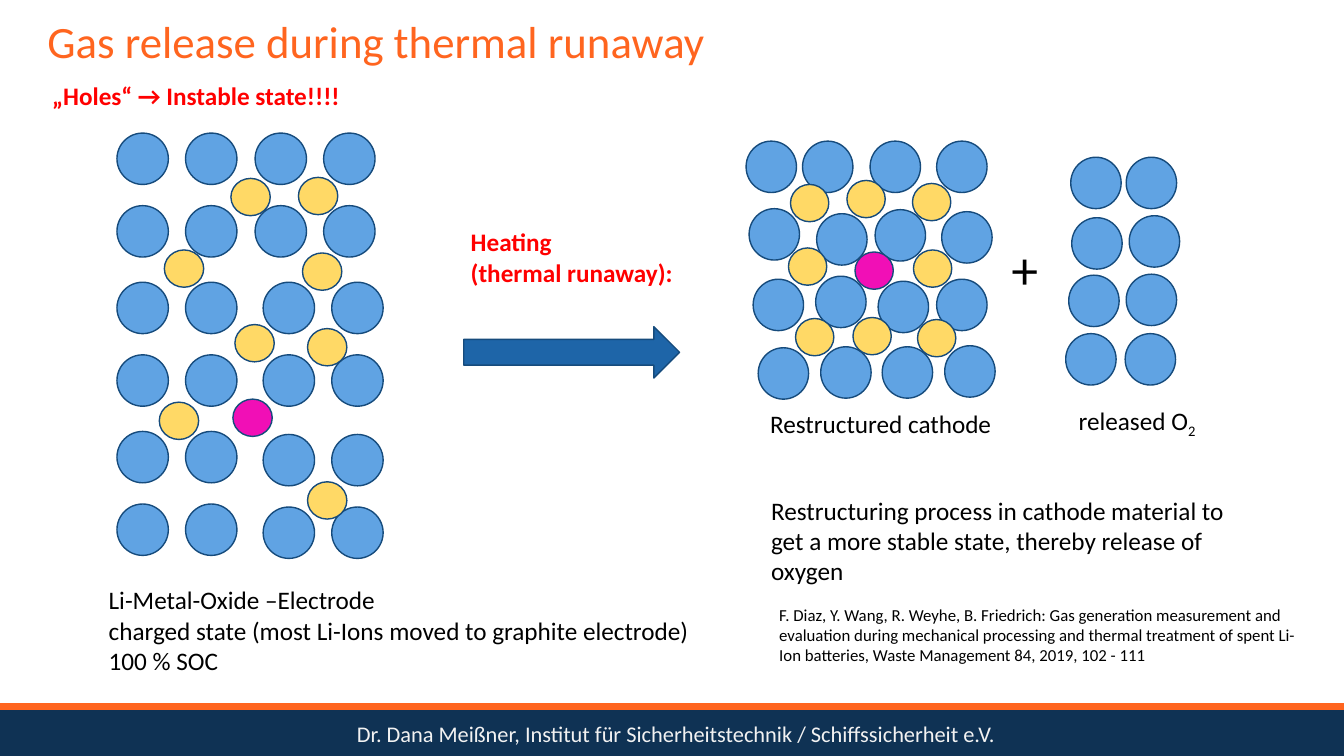
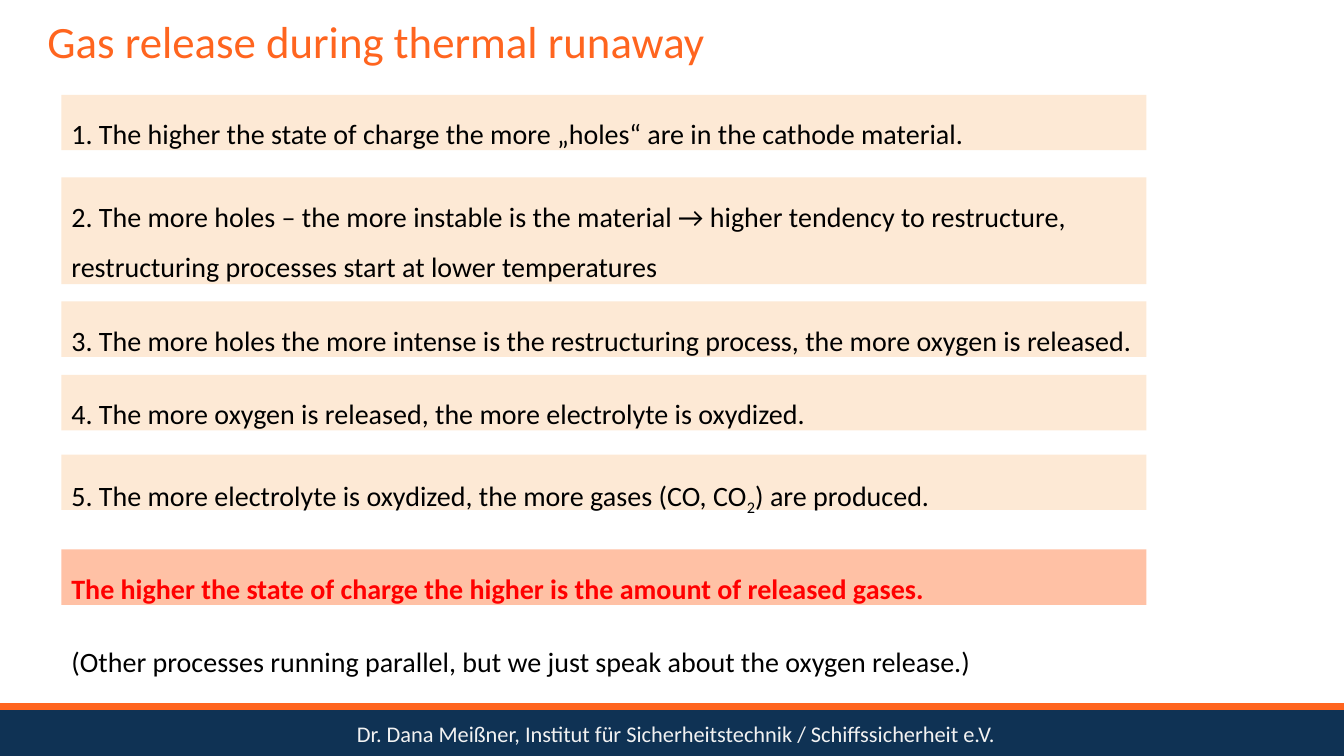
from dataclasses import dataclass
from itertools import product

from lxml import etree
from pptx import Presentation
from pptx.dml.color import RGBColor
from pptx.enum import shapes, text
from pptx.oxml import ns
from pptx.util import Inches, Pt


@dataclass(frozen=True)
class Theme:
    font: str = "Calibri"
    symbol_font: str = "Lato"
    orange: str = "FF651F"
    navy: str = "0F3254"
    footer_text: str = "F2F2F2"
    black: str = "000000"
    red: str = "FF0000"
    outline: str = "164B7C"
    arrow: str = "1E65A8"
    oxygen: str = "60A3E3"
    metal: str = "FFD966"
    lithium: str = "F10FB6"
    card: str = "FDE9D5"
    highlight: str = "FFC1A5"
    title_size: int = 32
    symbol_size: int = 36
    point_size: int = 20
    body_size: int = 18
    footer_size: int = 16
    source_size: int = 12


T = Theme()
TITLE = "Gas release during thermal runaway"
AUTHOR = "Dr. Dana Meißner, Institut für Sicherheitstechnik / Schiffssicherheit e.V."

# Charged electrode: a regular lattice whose lower right part is shifted
ROWS = (1.32, 2.04, 2.8, 3.52, 4.28, 5)
COLUMNS = (1.16, 1.84, 2.53, 3.21)
CHARGED_OXYGEN = [
    (x + (0.08 if c > 1 and r > 1 else 0), y + (0.03 if c > 1 and r > 3 else 0))
    for (r, y), (c, x) in product(enumerate(ROWS), enumerate(COLUMNS))
]
CHARGED_METAL = [(2.29, 1.77), (1.63, 2.48), (3.05, 3.26), (1.58, 3.99),
                 (2.33, 3.22), (3.05, 4.78), (3, 2.51), (2.96, 1.76)]
CHARGED_LITHIUM = [(2.31, 3.96)]

# Restructured cathode and released oxygen: irregular positions
CATHODE_OXYGEN = [
    (7.4, 1.4), (7.96, 1.4), (8.63, 1.4), (9.29, 1.4),
    (7.43, 2.07), (8.68, 2.08), (9.34, 2.1), (8.1, 2.12),
    (7.47, 2.77), (8.09, 2.74), (8.71, 2.79), (9.29, 2.77),
    (7.52, 3.45), (8.14, 3.44), (8.75, 3.44), (9.37, 3.43),
]
CATHODE_METAL = [(7.84, 1.83), (7.82, 2.46), (9.06, 2.48), (7.89, 3.16),
                 (8.46, 3.15), (9.05, 1.82), (8.4, 1.79), (9.1, 3.17)]
CATHODE_LITHIUM = [(8.48, 2.5)]
RELEASED_OXYGEN = [(10.62, 1.56), (11.17, 1.56), (10.63, 2.16), (11.2, 2.14),
                   (10.6, 2.73), (11.17, 2.72), (10.57, 3.31), (11.16, 3.31)]

# Conclusions: top, height, lines; ~ encloses a subscript
POINTS = [
    (0.94, 0.55, ["1. The higher the state of charge the more „holes“ are in the cathode material."]),
    (1.76, 1.06, ["2. The more holes – the more instable is the material → higher tendency to restructure,",
                  "restructuring processes start at lower temperatures"]),
    (2.99, 0.55, ["3. The more holes the more intense is the restructuring process, the more oxygen is released."]),
    (3.72, 0.55, ["4. The more oxygen is released, the more electrolyte is oxydized."]),
    (4.51, 0.55, ["5. The more electrolyte is oxydized, the more gases (CO, CO~2~) are produced."]),
]


def rgb(value):
    return RGBColor.from_string(value)


def set_font(font, size, color, name=T.font, bold=False):
    font.name, font.size, font.bold = name, Pt(size), bold
    font.color.rgb = rgb(color)


def add_text(s, box, lines, *, size=T.body_size, color=T.black, name=T.font,
             bold=False, wrap=False, fill=None, spacing=None):
    """Add a text box; parts between ~ marks are subscripts."""
    sp = s.shapes.add_textbox(*map(Inches, box))
    if fill:
        sp.fill.solid()
        sp.fill.fore_color.rgb = rgb(fill)
    tf = sp.text_frame
    tf.word_wrap = wrap
    tf.auto_size = text.MSO_AUTO_SIZE.SHAPE_TO_FIT_TEXT
    for i, line in enumerate(lines):
        p = tf.add_paragraph() if i else tf.paragraphs[0]
        if spacing:
            p.line_spacing = spacing
        for j, part in enumerate(line.split("~")):
            r = p.add_run()
            r.text = part
            set_font(r.font, size, color, name, bold)
            if j % 2:
                r.font._element.set("baseline", "-25000")


def add_solid(s, kind, box, fill, outline=None):
    sp = s.shapes.add_shape(kind, *map(Inches, box))
    sp.shadow.inherit = False
    sp.fill.solid()
    sp.fill.fore_color.rgb = rgb(fill)
    if outline:
        sp.line.color.rgb = rgb(outline)
        sp.line.width = Pt(1)
    else:
        sp.line.fill.background()


def add_atoms(s, positions, size, fill):
    for position in positions:
        add_solid(s, shapes.MSO_SHAPE.OVAL, (*position, *size), fill, T.outline)


def add_line(s, x1, y1, x2, y2, color, width):
    line = s.shapes.add_connector(shapes.MSO_CONNECTOR.STRAIGHT,
                                  *map(Inches, (x1, y1, x2, y2)))
    line.line.color.rgb = rgb(color)
    line.line.width = Pt(width)
    etree.SubElement(line._element.spPr, ns.qn("a:effectLst"))


def add_slide(prs):
    """Add a slide with the shared footer band and title."""
    s = prs.slides.add_slide(prs.slide_layouts[5])
    add_solid(s, shapes.MSO_SHAPE.RECTANGLE, (0, 7.01, 13.33, 0.5), T.navy)
    add_line(s, 0, 7.01, 13.33, 7.01, T.orange, 4.5)
    add_text(s, (3.44, 7.1, 6.61, 0.37), [AUTHOR], size=T.footer_size, color=T.footer_text)

    title = s.shapes.title
    title.left, title.top, title.width, title.height = map(Inches, (0.37, 0.1, 12.6, 0.67))
    tf = title.text_frame
    tf.text = TITLE
    tf.word_wrap = True
    tf.auto_size = text.MSO_AUTO_SIZE.NONE
    tf.vertical_anchor = text.MSO_ANCHOR.MIDDLE
    p = tf.paragraphs[0]
    p.alignment = text.PP_ALIGN.LEFT
    p.line_spacing = 0.9
    set_font(p.runs[0].font, T.title_size, T.orange)
    return s


def build_restructuring(prs):
    s = add_slide(prs)

    # Charged electrode
    add_atoms(s, CHARGED_OXYGEN, (0.51, 0.51), T.oxygen)
    add_atoms(s, CHARGED_METAL, (0.39, 0.37), T.metal)
    add_atoms(s, CHARGED_LITHIUM, (0.39, 0.37), T.lithium)
    add_text(s, (0.42, 0.75, 3.1, 0.4), ["„Holes“ → Instable state!!!!"], color=T.red, bold=True)
    add_text(s, (0.98, 5.75, 6, 1.01), [
        "Li-Metal-Oxide –Electrode",
        "charged state (most Li-Ions moved to graphite electrode)",
        "100 % SOC",
    ])

    # Heating step
    add_text(s, (4.57, 2.2, 2.22, 0.71), ["Heating", "(thermal runaway):"], color=T.red, bold=True)
    add_solid(s, shapes.MSO_SHAPE.RIGHT_ARROW, (4.6, 3.24, 2.14, 0.51), T.arrow, T.outline)

    # Restructured cathode and released oxygen
    add_atoms(s, CATHODE_OXYGEN + RELEASED_OXYGEN, (0.5, 0.51), T.oxygen)
    add_atoms(s, CATHODE_METAL, (0.38, 0.37), T.metal)
    add_atoms(s, CATHODE_LITHIUM, (0.38, 0.37), T.lithium)
    add_text(s, (7.54, 4, 2.42, 0.4), ["Restructured cathode"])
    add_text(s, (9.92, 2.32, 0.57, 0.71), ["+"], size=T.symbol_size, name=T.symbol_font)
    add_text(s, (10.6, 3.97, 1.39, 0.4), ["released O~2~"])

    # Explanation and reference
    add_text(s, (7.55, 4.86, 4.74, 1.01), [
        "Restructuring process in cathode material to get a more stable state, "
        "thereby release of oxygen"], wrap=True)
    add_text(s, (7.63, 5.95, 5.35, 0.71), [
        "F. Diaz, Y. Wang, R. Weyhe, B. Friedrich: Gas generation measurement and "
        "evaluation during mechanical processing and thermal treatment of spent "
        "Li-Ion batteries, Waste Management 84, 2019, 102 - 111"],
        size=T.source_size, wrap=True)


def build_conclusions(prs):
    s = add_slide(prs)
    card = dict(size=T.point_size, wrap=True, spacing=1.5)
    for top, height, lines in POINTS:
        add_text(s, (0.61, top, 10.76, height), lines, fill=T.card, **card)
    add_text(s, (0.61, 5.45, 10.76, 0.55),
             ["The higher the state of charge the higher is the amount of released gases."],
             color=T.red, bold=True, fill=T.highlight, **card)
    add_text(s, (0.61, 6.34, 9.12, 0.44),
             ["(Other processes running parallel, but we just speak about the oxygen release.)"],
             size=T.point_size)


def main():
    prs = Presentation()
    prs.slide_width, prs.slide_height = Inches(13.33), Inches(7.5)
    build_restructuring(prs)
    build_conclusions(prs)
    prs.save("out.pptx")


if __name__ == "__main__":
    main()
